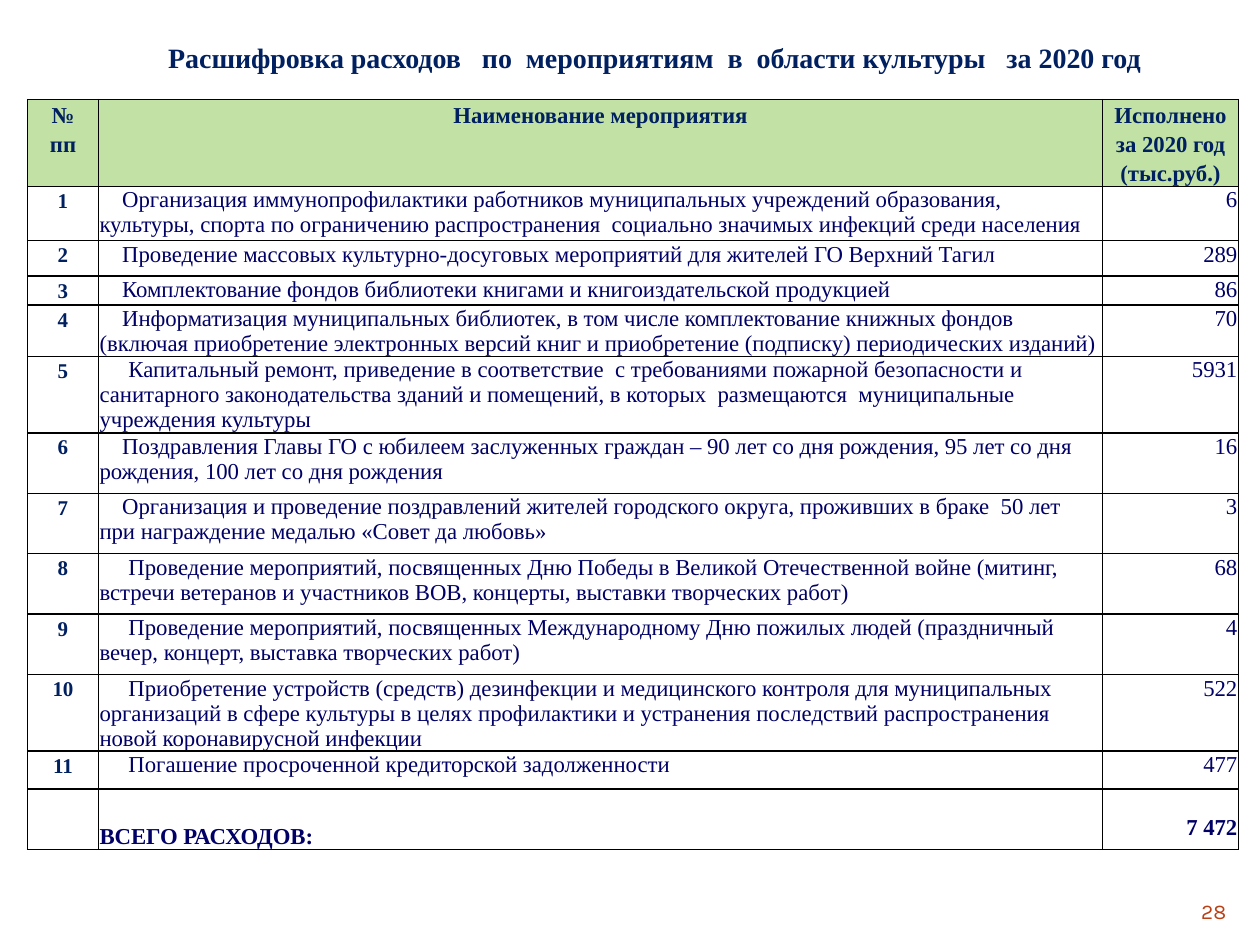
from lxml.etree import SubElement as Sub
from pptx import Presentation
from pptx.dml.color import RGBColor
from pptx.enum.text import MSO_ANCHOR as Anchor, PP_ALIGN as Align
from pptx.oxml.ns import qn
from pptx.util import Inches, Pt

TITLE = "Расшифровка расходов   по  мероприятиям  в  области культуры   за 2020 год"
PAGE = "28"
HEAD = ["№\nпп", "Наименование мероприятия", "Исполнено\nза 2020 год\n(тыс.руб.)"]
# name, amount, row height, first-line indent
ITEMS = [
    ("Организация иммунопрофилактики работников муниципальных учреждений образования, культуры, спорта по ограничению распространения  социально значимых инфекций среди населения", "6", 0.43, 0.18),
    ("Проведение массовых культурно-досуговых мероприятий для жителей ГО Верхний Тагил", "289", 0.28, 0.18),
    ("Комплектование фондов библиотеки книгами и книгоиздательской продукцией", "86", 0.23, 0.18),
    ("Информатизация муниципальных библиотек, в том числе комплектование книжных фондов (включая приобретение электронных версий книг и приобретение (подписку) периодических изданий)", "70", 0.41, 0.18),
    ("Капитальный ремонт, приведение в соответствие  с требованиями пожарной безопасности и санитарного законодательства зданий и помещений, в которых  размещаются  муниципальные учреждения культуры", "5931", 0.6, 0.23),
    ("Поздравления Главы ГО с юбилеем заслуженных граждан – 90 лет со дня рождения, 95 лет со дня рождения, 100 лет со дня рождения", "16", 0.48, 0.18),
    ("Организация и проведение поздравлений жителей городского округа, проживших в браке  50 лет при награждение медалью «Совет да любовь»", "3", 0.48, 0.18),
    ("Проведение мероприятий, посвященных Дню Победы в Великой Отечественной войне (митинг, встречи ветеранов и участников ВОВ, концерты, выставки творческих работ)", "68", 0.48, 0.23),
    ("Проведение мероприятий, посвященных Международному Дню пожилых людей (праздничный вечер, концерт, выставка творческих работ)", "4", 0.48, 0.23),
    ("Приобретение устройств (средств) дезинфекции и медицинского контроля для муниципальных организаций в сфере культуры в целях профилактики и устранения последствий распространения новой коронавирусной инфекции", "522", 0.6, 0.23),
    ("Погашение просроченной кредиторской задолженности", "477", 0.3, 0.23),
]
TOTAL = ["ВСЕГО РАСХОДОВ:", "7 472"]
COLS = [0.56, 7.97, 1.08]
HEAD_H, TOTAL_H = 0.69, 0.48
HEAD_LEAD, NUM_LEAD, BODY_LEAD = Pt(16.5), Pt(15.3), Pt(14.3)
NAVY, INK, GREEN, BLACK, RUST = "002060", "000066", "C2E1A5", "000000", "BA4014"
SERIF = "Times New Roman"


def rgb(code):
    return RGBColor.from_string(code)


def write(frame, text, size, color, align, bold=False, font=SERIF, lead=None, indent=0):
    frame.text = text
    for para in frame.paragraphs:
        para.alignment = align
        if lead:
            para.line_spacing = lead
        if indent:
            props = para._p.get_or_add_pPr()
            props.set("marL", "0")
            props.set("indent", str(Inches(indent)))
        face = para.font
        face.name, face.size, face.bold = font, Pt(size), bold
        face.color.rgb = rgb(color)


def body(cell, text, align, bold=False, indent=0):
    write(cell.text_frame, text, 13, INK, align, bold, lead=BODY_LEAD, indent=indent)


def label(slide, box, *args, **opts):
    frame = slide.shapes.add_textbox(*map(Inches, box)).text_frame
    frame.word_wrap = True
    write(frame, *args, **opts)
    return frame


def style(cell, side, top, fill=None):
    """Set the insets, the black grid lines and the fill of a cell."""
    cell.margin_left = cell.margin_right = Inches(side)
    cell.margin_top, cell.margin_bottom = Inches(top), 0
    props = cell._tc.get_or_add_tcPr()
    for edge in "LRTB":
        line = Sub(props, qn(f"a:ln{edge}"), w=str(Pt(1)))
        Sub(Sub(line, qn("a:solidFill")), qn("a:srgbClr"), val=BLACK)
    if fill:
        cell.fill.solid()
        cell.fill.fore_color.rgb = rgb(fill)
    else:
        cell.fill.background()


def build_table(slide):
    heights = [HEAD_H, *(item[2] for item in ITEMS), TOTAL_H]
    table = slide.shapes.add_table(
        len(heights), len(COLS), Inches(0.22), Inches(0.79),
        Inches(sum(COLS)), Inches(sum(heights))).table
    table.first_row = table.horz_banding = False
    for col, width in zip(table.columns, COLS):
        col.width = Inches(width)
    for row, height in zip(table.rows, heights):
        row.height = Inches(height)

    for c, text in enumerate(HEAD):
        cell = table.cell(0, c)
        style(cell, 0.04, 0, GREEN)
        write(cell.text_frame, text, 13, NAVY, Align.CENTER, True, lead=HEAD_LEAD)

    for r, (name, amount, _, indent) in enumerate(ITEMS, 1):
        num, title, value = table.rows[r].cells
        style(num, 0.05, 0)
        write(num.text_frame, str(r), 12, NAVY, Align.CENTER, True, lead=NUM_LEAD)
        style(title, 0.01, 0.01)
        title.margin_right = Inches(0.03)
        body(title, name, Align.LEFT, indent=indent)
        style(value, 0.01, 0.01)
        body(value, amount, Align.RIGHT)

    blank, name, value = table.rows[len(heights) - 1].cells
    style(blank, 0.05, 0)
    style(name, 0.01, 0.01)
    name.vertical_anchor = Anchor.BOTTOM
    body(name, TOTAL[0], Align.LEFT, True)
    style(value, 0.01, 0.21)
    body(value, TOTAL[1], Align.RIGHT, True)


def main():
    deck = Presentation()
    deck.slide_width, deck.slide_height = Inches(10), Inches(7.5)
    slide = deck.slides.add_slide(deck.slide_layouts[6])
    label(slide, (9, 7.08, 0.83, 0.27), PAGE, 12, RUST, Align.RIGHT, font="Karla")
    build_table(slide)
    title = label(slide, (0.39, 0.27, 9.61, 0.52), TITLE, 16, NAVY, Align.CENTER, True)
    title.vertical_anchor = Anchor.MIDDLE
    title.margin_bottom = Inches(0.2)
    deck.save("out.pptx")


if __name__ == "__main__":
    main()
